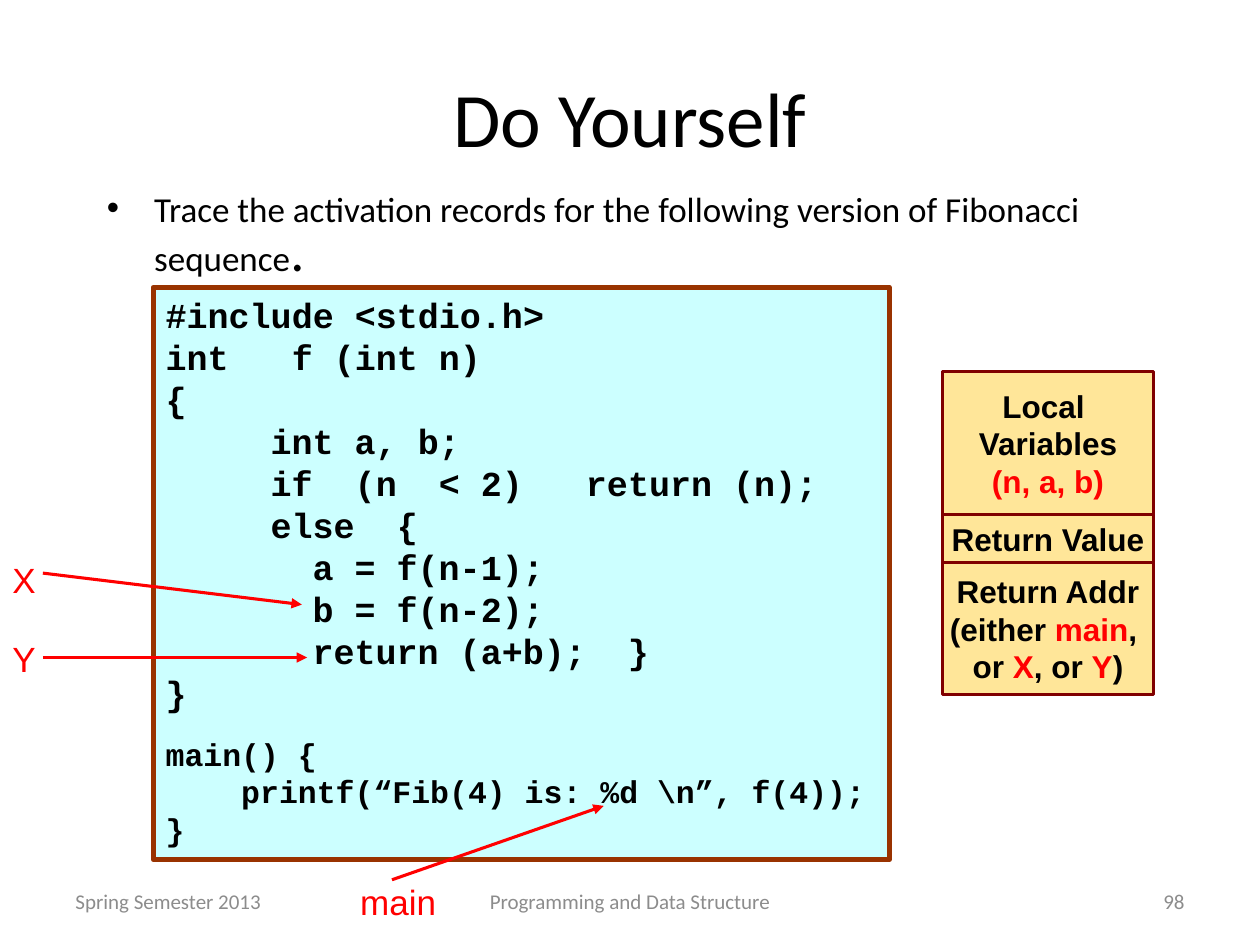
from lxml import etree
from pptx import Presentation
from pptx.dml.color import RGBColor
from pptx.enum import shapes, text
from pptx.oxml import ns
from pptx.util import Pt

BLACK = RGBColor(0x00, 0x00, 0x00)
RED = RGBColor(0xFF, 0x00, 0x00)
GRAY = RGBColor(0x8C, 0x8C, 0x8C)
CYAN = RGBColor(0xCC, 0xFF, 0xFF)
BROWN = RGBColor(0x99, 0x33, 0x00)
GOLD = RGBColor(0xFF, 0xE6, 0x99)
MAROON = RGBColor(0x80, 0x00, 0x00)
LEFT, CENTER, RIGHT = text.PP_ALIGN.LEFT, text.PP_ALIGN.CENTER, text.PP_ALIGN.RIGHT
TOP, MIDDLE = text.MSO_ANCHOR.TOP, text.MSO_ANCHOR.MIDDLE


def style(p, size, name, color, bold=False, align=LEFT):
    p.alignment = align
    p.font.size, p.font.name, p.font.bold = Pt(size), name, bold
    p.font.color.rgb = color


def add_box(s, box, fill=None, line=None, width=0, anchor=TOP, wrap=True):
    if fill is None:
        sp = s.shapes.add_textbox(*map(Pt, box))
    else:
        sp = s.shapes.add_shape(shapes.MSO_SHAPE.RECTANGLE, *map(Pt, box))
        sp.shadow.inherit = False
        sp.fill.solid()
        sp.fill.fore_color.rgb = fill
        sp.line.color.rgb = line
        sp.line.width = Pt(width)
    tf = sp.text_frame
    tf.word_wrap, tf.vertical_anchor = wrap, anchor
    return tf


prs = Presentation()
prs.slide_width, prs.slide_height = Pt(720), Pt(540)
s = prs.slides.add_slide(prs.slide_layouts[5])

title = s.shapes.title
title.left, title.top, title.width, title.height = Pt(36), Pt(21.6), Pt(648), Pt(90)
tf = title.text_frame
tf.text = "Do Yourself"
tf.vertical_anchor = MIDDLE
style(tf.paragraphs[0], 44, "Calibri", BLACK, align=CENTER)

p = add_box(s, (54, 108, 612, 62)).paragraphs[0]
style(p, 20, "Calibri", BLACK)
p.line_spacing, p.space_before = 0.8, Pt(4)
for t, size in [
    ("Trace the activation records for the following version of Fibonacci sequence", 20),
    (".", 32),
]:
    r = p.add_run()
    r.text, r.font.size = t, Pt(size)
pPr = p._p.get_or_add_pPr()
pPr.set("marL", str(Pt(27)))
pPr.set("indent", str(Pt(-27)))
bullet = etree.Element(ns.qn("a:buChar"), char="•")
pPr.find(ns.qn("a:defRPr")).addprevious(bullet)
bullet.addprevious(etree.Element(ns.qn("a:buFont"), typeface="Arial"))

for t, x, w, align in [
    ("Spring Semester 2013", 36, 168, LEFT),
    ("Programming and Data Structure", 246, 228, CENTER),
    ("98", 516, 168, RIGHT),
]:
    p = add_box(s, (x, 500.5, w, 28.75), anchor=MIDDLE).paragraphs[0]
    p.text = t
    style(p, 12, "Calibri", GRAY, align=align)

code = [
    (0, "#include <stdio.h>", 20),
    (0, "int   f (int n)", 20),
    (0, "{", 20),
    (5, "int a, b;", 20),
    (5, "if  (n  < 2)   return (n);", 20),
    (5, "else  {", 20),
    (7, "a = f(n-1);", 20),
    (7, "b = f(n-2);", 20),
    (7, "return (a+b);  }", 20),
    (0, "}", 20),
    (0, "main() {", 18),
    (4, "printf(“Fib(4) is: %d \\n”, f(4));", 18),
    (0, "}", 18),
]
tf = add_box(s, (87.6, 164.2, 420.6, 327), CYAN, BROWN, 3)
for i, (depth, t, size) in enumerate(code):
    p = tf.paragraphs[0] if i == 0 else tf.add_paragraph()
    p.text = t
    style(p, size, "Courier New", BLACK, bold=True)
    p._p.get_or_add_pPr().set("marL", str(Pt(depth * size * 0.6)))
    if t.startswith("main"):
        p.space_before = Pt(12)

record = [
    (212.5, 81.75, [[("Local ", BLACK)], [("Variables", BLACK)], [("(n, a, b)", RED)]]),
    (294.25, 27.25, [[("Return Value", BLACK)]]),
    (321.5, 75.25, [
        [("Return Addr", BLACK)],
        [("(either ", BLACK), ("main", RED), (", ", BLACK)],
        [("or ", BLACK), ("X", RED), (", or ", BLACK), ("Y", RED), (")", BLACK)],
    ]),
]
for y, h, lines in record:
    tf = add_box(s, (538.5, y, 120.75, h), GOLD, MAROON, 1.75, MIDDLE, wrap=False)
    for i, runs in enumerate(lines):
        p = tf.paragraphs[0] if i == 0 else tf.add_paragraph()
        style(p, 18, "Arial", BLACK, bold=True, align=CENTER)
        for t, color in runs:
            r = p.add_run()
            r.text, r.font.color.rgb = t, color

callouts = [
    ("X", (0, 315.4, 48, 31), (24.5, 327.5, 172.5, 345.5)),
    ("Y", (0, 360.7, 48, 31), (24.5, 375.75, 175.5, 375.75)),
    ("main", (198.7, 499.7, 60.5, 31), (224, 502.75, 345, 460.5)),
]
for t, box, ends in callouts:
    p = add_box(s, box).paragraphs[0]
    p.text = t
    style(p, 20, "Arial", RED)
    line = s.shapes.add_connector(shapes.MSO_CONNECTOR.STRAIGHT, *map(Pt, ends))
    line.line.color.rgb, line.line.width = RED, Pt(1.75)
    etree.SubElement(line.line._get_or_add_ln(), ns.qn("a:tailEnd"), type="triangle")
    etree.SubElement(line._element.spPr, ns.qn("a:effectLst"))

prs.save("out.pptx")
